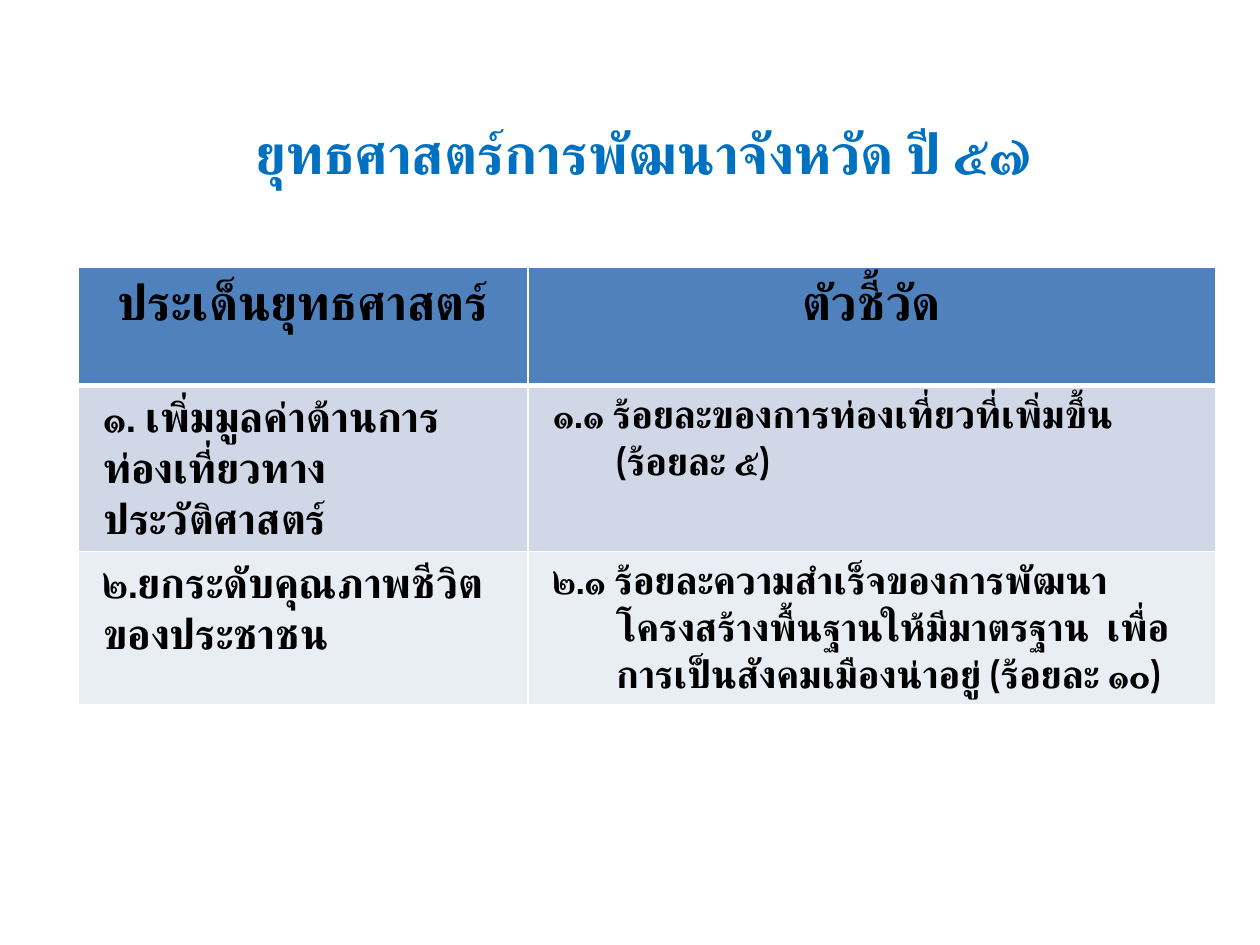
from dataclasses import dataclass

from lxml.etree import SubElement
from pptx import Presentation
from pptx.dml.color import RGBColor
from pptx.enum.lang import MSO_LANGUAGE_ID
from pptx.enum.text import MSO_ANCHOR, PP_ALIGN
from pptx.oxml.ns import qn
from pptx.util import Inches, Pt


@dataclass(frozen=True)
class Theme:
    """Colours, font and type sizes."""
    font: str = "Cabin"
    title: str = "0070C0"
    text: str = "000000"
    border: str = "FFFFFF"
    fills: tuple = ("4F81BD", "D0D8E8", "E9EDF4")
    title_size: int = 32
    head_size: int = 28
    body_sizes: tuple = (24, 22)


def write(tf, text, *, size, color, font, align=PP_ALIGN.LEFT, hanging=0):
    """Write one bold Thai paragraph into a text frame."""
    tf.word_wrap = True
    p = tf.paragraphs[0]
    p.alignment = align
    if hanging:
        pPr = p._p.get_or_add_pPr()
        pPr.set("marL", str(Inches(hanging)))
        pPr.set("indent", str(-Inches(hanging)))
    r = p.add_run()
    r.text = text
    r.font.name = font
    r.font.size = Pt(size)
    r.font.bold = True
    r.font.color.rgb = RGBColor.from_string(color)
    r.font.language_id = MSO_LANGUAGE_ID.THAI
    SubElement(r.font._element, qn("a:cs"), typeface=font)


class SlideBuilder:
    """Adds styled elements to the current slide."""

    def __init__(self, slide, theme):
        self.s = slide
        self.theme = theme

    def title(self, text, left, top, width, height):
        """Add the centred title."""
        sp = self.s.shapes.add_textbox(Inches(left), Inches(top), Inches(width), Inches(height))
        sp.text_frame.vertical_anchor = MSO_ANCHOR.MIDDLE
        write(sp.text_frame, text, size=self.theme.title_size, color=self.theme.title,
              font=self.theme.font, align=PP_ALIGN.CENTER)

    def table(self, rows, left, top, widths, heights):
        """Add a table with a header row."""
        frame = self.s.shapes.add_table(len(rows), len(widths), Inches(left), Inches(top),
                                        Inches(sum(widths)), Inches(sum(heights)))
        table = frame.table
        table.horz_banding = False
        for column, width in zip(table.columns, widths):
            column.width = Inches(width)
        for i, (texts, height) in enumerate(zip(rows, heights)):
            table.rows[i].height = Inches(height)
            for j, text in enumerate(texts):
                self.cell(table.cell(i, j), text, i, j)

    def cell(self, cell, text, row, col):
        """Style and fill one table cell."""
        th = self.theme
        head = row == 0
        cell.margin_left = cell.margin_right = Inches(0.2)
        cell.margin_top = cell.margin_bottom = Inches(0.05)
        write(cell.text_frame, text, size=th.head_size if head else th.body_sizes[col],
              color=th.text, font=th.font, align=PP_ALIGN.CENTER if head else PP_ALIGN.LEFT,
              hanging=0.5 if col and not head else 0)
        self.borders(cell, top=3 if row == 1 else 1, bottom=3 if head else 1)
        cell.fill.solid()
        cell.fill.fore_color.rgb = RGBColor.from_string(th.fills[row])

    def borders(self, cell, top, bottom):
        """Draw the four borders of a cell."""
        tcPr = cell._tc.get_or_add_tcPr()
        for side, width in (("L", 1), ("R", 1), ("T", top), ("B", bottom)):
            ln = SubElement(tcPr, qn(f"a:ln{side}"), w=str(Pt(width)))
            fill = SubElement(ln, qn("a:solidFill"))
            SubElement(fill, qn("a:srgbClr"), val=self.theme.border)


def main():
    """Build and save the slide."""
    prs = Presentation()
    prs.slide_width, prs.slide_height = Inches(10), Inches(7.5)
    builder = SlideBuilder(prs.slides.add_slide(prs.slide_layouts[6]), Theme())
    rows = [
        ("ประเด็นยุทธศาสตร์", "ตัวชี้วัด"),
        ("๑. เพิ่มมูลค่าด้านการท่องเที่ยวทางประวัติศาสตร์",
         "๑.๑ ร้อยละของการท่องเที่ยวที่เพิ่มขึ้น (ร้อยละ ๕)"),
        ("๒.ยกระดับคุณภาพชีวิตของประชาชน",
         "๒.๑ ร้อยละความสำเร็จของการพัฒนาโครงสร้างพื้นฐานให้มีมาตรฐาน  "
         "เพื่อการเป็นสังคมเมืองน่าอยู่ (ร้อยละ ๑๐)"),
    ]
    builder.table(rows, 0.62, 2.12, widths=(3.57, 5.46), heights=(0.94, 1, 1))
    builder.title("ยุทธศาสตร์การพัฒนาจังหวัด ปี ๕๗", 0.61, 0.77, 9, 0.87)
    prs.save("out.pptx")


if __name__ == "__main__":
    main()
